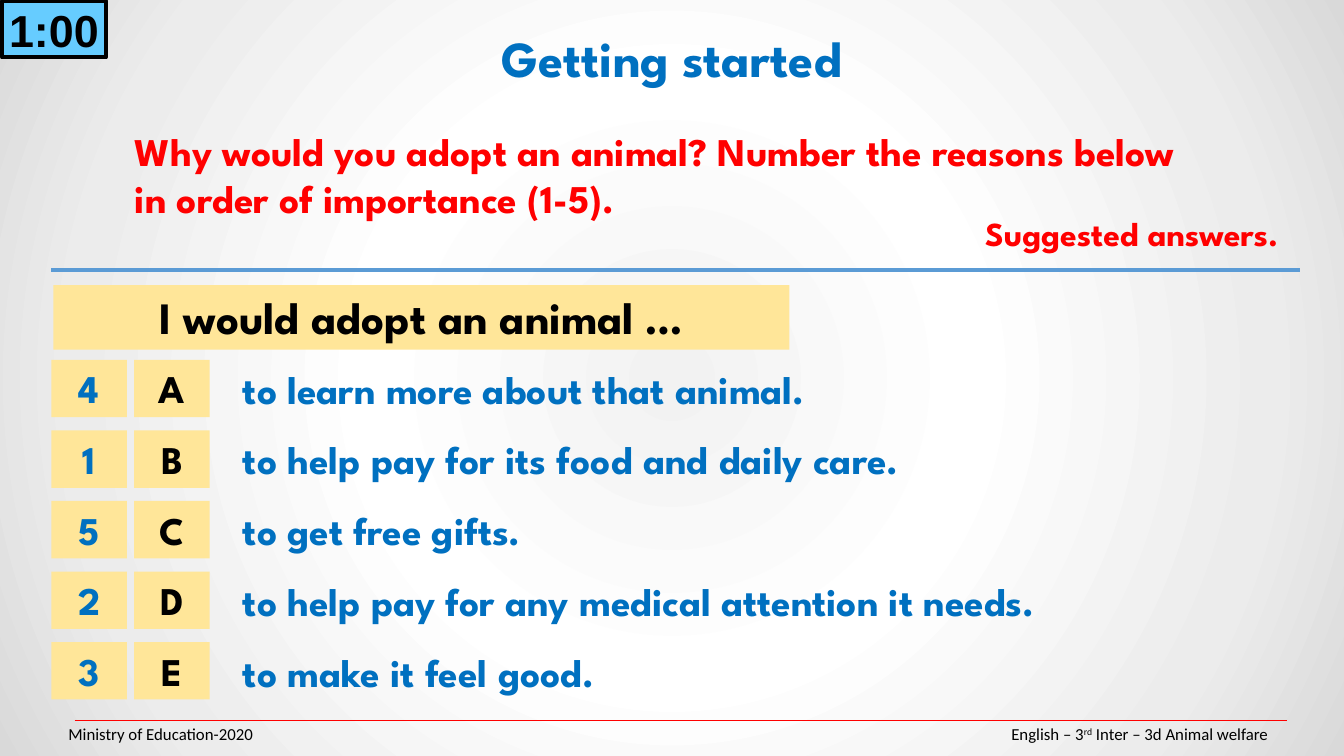
from dataclasses import dataclass

from lxml import etree
from pptx import Presentation
from pptx import util as u
from pptx.dml.color import RGBColor
from pptx.enum import shapes, text
from pptx.oxml import parse_xml
from pptx.oxml.ns import nsdecls, qn

EMU_PER_PX = 9144
DISPLAY_FONT = "League Spartan"
BLUE, RED, BLACK, SAND = "0070C0", "FF0000", "000000", "FFE699"
CENTER = text.PP_ALIGN.CENTER
ROW_TOP, ROW_PITCH, CELL_WIDTH, CELL_HEIGHT = 357, 70, 75, 57
RANK_LEFT, LETTER_LEFT = 51, 133
BACKGROUND_STOPS = ((0, "F2F2F2"), (39, "FFFFFF"), (78, "ECECEC"), (100, "D9D9D9"))


@dataclass(frozen=True)
class Area:
    left: int
    top: int
    width: int
    height: int

    def emu(self) -> tuple[u.Emu, ...]:
        return tuple(px(n) for n in (self.left, self.top, self.width, self.height))


@dataclass(frozen=True)
class Style:
    size: int
    color: str
    align: text.PP_ALIGN = text.PP_ALIGN.LEFT
    font: str = DISPLAY_FONT
    bold: bool = True


@dataclass(frozen=True)
class Reason:
    rank: str
    letter: str
    wording: str


REASONS = (
    Reason("4", "A", "to learn more about that animal."),
    Reason("1", "B", "to help pay for its food and daily care."),
    Reason("5", "C", "to get free gifts."),
    Reason("2", "D", "to help pay for any medical attention it needs."),
    Reason("3", "E", "to make it feel good."),
)


def px(length: int) -> u.Emu:
    return u.Emu(length * EMU_PER_PX)


def rgb(color: str) -> RGBColor:
    return RGBColor.from_string(color)


def format_para(para, style: Style) -> None:
    para.alignment = style.align
    para.font.name = style.font
    para.font.size = u.Pt(style.size)
    para.font.bold = style.bold
    para.font.color.rgb = rgb(style.color)


def write(shape, wording: str, style: Style) -> None:
    frame = shape.text_frame
    frame.word_wrap = True
    frame.auto_size = text.MSO_AUTO_SIZE.NONE
    frame.vertical_anchor = text.MSO_ANCHOR.TOP
    frame.text = wording
    for para in frame.paragraphs:
        format_para(para, style)


def place(shape, area: Area) -> None:
    shape.left, shape.top, shape.width, shape.height = area.emu()


def add_text(page, area: Area, wording: str, style: Style):
    box = page.shapes.add_textbox(*area.emu())
    write(box, wording, style)
    return box


def add_panel(page, area: Area, wording: str, style: Style, fill: str = SAND):
    panel = page.shapes.add_shape(shapes.MSO_SHAPE.RECTANGLE, *area.emu())
    panel.shadow.inherit = False
    panel.fill.solid()
    panel.fill.fore_color.rgb = rgb(fill)
    panel.line.fill.background()
    write(panel, wording, style)
    return panel


def add_rule(page, left: int, right: int, top: int, color: str, points: float) -> None:
    rule = page.shapes.add_connector(
        shapes.MSO_CONNECTOR.STRAIGHT, px(left), px(top), px(right), px(top))
    rule.line.color.rgb = rgb(color)
    rule.line.width = u.Pt(points)
    etree.SubElement(rule._element.spPr, qn("a:effectLst"))


def paint_background(page) -> None:
    page.background.fill.solid()
    stops = "".join(
        f'<a:gs pos="{percent * 1000}"><a:srgbClr val="{color}"/></a:gs>'
        for percent, color in BACKGROUND_STOPS)
    gradient = parse_xml(
        f'<a:gradFill {nsdecls("a")} rotWithShape="1"><a:gsLst>{stops}</a:gsLst>'
        '<a:path path="circle"><a:fillToRect l="50000" t="50000" r="50000" b="50000"/>'
        '</a:path></a:gradFill>')
    properties = page.element.xpath(".//p:bgPr")[0]
    properties.replace(properties[0], gradient)


def fill_reasons(body) -> None:
    place(body, Area(231, ROW_TOP, 929, ROW_PITCH * 4 + CELL_HEIGHT))
    write(body, "\n".join(reason.wording for reason in REASONS), Style(28, BLUE))
    for para in body.text_frame.paragraphs:
        para.space_before = u.Pt(0)
        para.space_after = u.Pt(17)
        properties = para._p.get_or_add_pPr()
        properties.set("marL", "0")
        properties.set("indent", "0")
        properties.find(qn("a:defRPr")).addprevious(
            parse_xml(f'<a:buNone {nsdecls("a")}/>'))


def add_footer(page) -> None:
    add_rule(page, 74, 1276, 715, RED, 0.5)
    style = Style(12, BLACK, font="Calibri", bold=False)
    box = add_text(page, Area(58, 708, 1237, 40), "", style)
    box.text_frame.vertical_anchor = text.MSO_ANCHOR.MIDDLE
    para = box.text_frame.paragraphs[0]
    for wording in ("Ministry of Education-2020\tEnglish – 3", "rd",
                    " Inter – 3d Animal welfare"):
        span = para.add_run()
        span.text = wording
        if wording == "rd":
            span._r.get_or_add_rPr().set("baseline", "30000")
    para._p.get_or_add_pPr().find(qn("a:defRPr")).addprevious(parse_xml(
        f'<a:tabLst {nsdecls("a")}><a:tab pos="{px(1190)}" algn="r"/></a:tabLst>'))


def main() -> None:
    deck = Presentation()
    deck.slide_width, deck.slide_height = px(1333), px(750)
    page = deck.slides.add_slide(deck.slide_layouts[1])
    paint_background(page)

    title, body = page.placeholders
    place(title, Area(464, 22, 405, 70))
    write(title, "Getting started", Style(36, BLUE, CENTER))
    title.text_frame.paragraphs[0].line_spacing = u.Pt(43.2)
    fill_reasons(body)

    add_text(page, Area(124, 121, 1085, 104),
             "Why would you adopt an animal? Number the reasons below "
             "in order of importance (1-5).", Style(28, RED))
    timer = add_panel(page, Area(2, 1, 103, 56), "1:00",
                      Style(32, BLACK, CENTER, "Arial"), "66CCFF")
    timer.line.color.rgb = rgb(BLACK)
    timer.line.width = u.Pt(3)
    timer.text_frame.word_wrap = False
    timer.text_frame.vertical_anchor = text.MSO_ANCHOR.MIDDLE
    add_text(page, Area(937, 206, 371, 50), "Suggested answers.", Style(24, RED, CENTER))
    add_rule(page, 51, 1289, 268, "5B9BD5", 3)

    for row, reason in enumerate(REASONS):
        top = ROW_TOP + row * ROW_PITCH
        for left, wording, color in ((RANK_LEFT, reason.rank, BLUE),
                                     (LETTER_LEFT, reason.letter, BLACK)):
            add_panel(page, Area(left, top, CELL_WIDTH, CELL_HEIGHT), wording,
                      Style(28, color, CENTER))
    add_panel(page, Area(53, 283, 730, 64), "I would adopt an animal …",
              Style(32, BLACK, CENTER))
    add_footer(page)
    deck.save("out.pptx")


if __name__ == "__main__":
    main()
